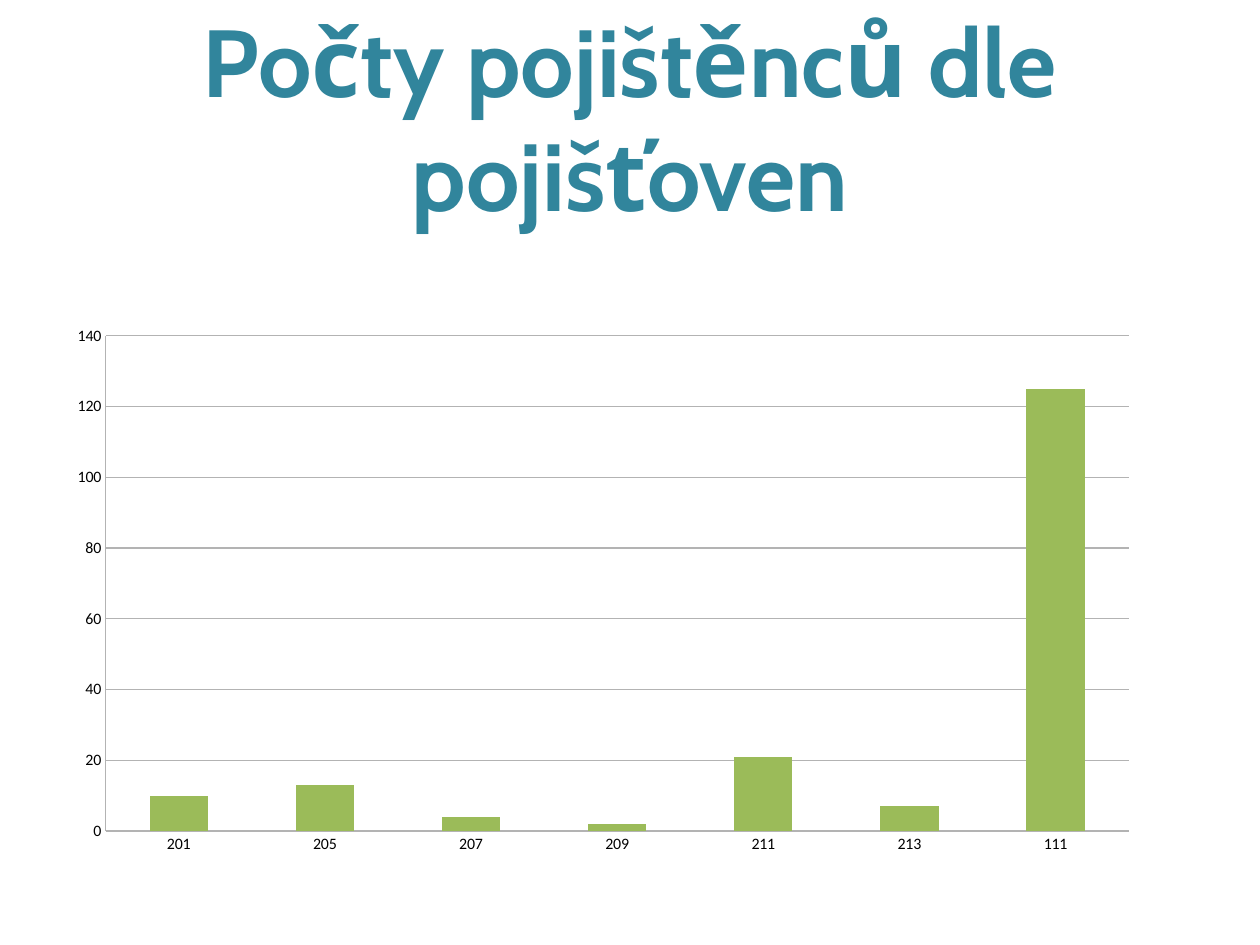
from pptx import Presentation
from pptx.chart.data import CategoryChartData as ChartData
from pptx.dml.color import RGBColor
from pptx.enum.chart import XL_CHART_TYPE as ChartType, XL_TICK_MARK as TickMark
from pptx.enum.text import MSO_ANCHOR as Anchor, MSO_AUTO_SIZE as AutoSize, PP_ALIGN as Align
from pptx.oxml import parse_xml
from pptx.oxml.ns import nsdecls, qn
from pptx.util import Cm, Inches, Pt

INSURERS = ["201", "205", "207", "209", "211", "213", "111"]
INSURED_COUNTS = [10, 13, 4, 2, 21, 7, 125]


def colour(value):
    """Turn a hex string into a colour."""
    return RGBColor.from_string(value)


class SlideBuilder:
    """Hold the style and the current slide."""

    title_font, chart_font = "Cabin", "Calibri"
    title_colour, bar_colour, line_colour, text_colour = "31859C", "9BBB59", "B3B3B3", "000000"

    def __init__(self, deck):
        """Add a title-only slide with a white background."""
        self.page = deck.slides.add_slide(deck.slide_layouts[5])
        self.page.background.fill.solid()
        self.page.background.fill.fore_color.rgb = colour("FFFFFF")

    def title(self, text, left, top, width, height):
        """Place and format the title placeholder."""
        box = self.page.shapes.title
        box.left, box.top, box.width, box.height = map(Inches, (left, top, width, height))
        frame = box.text_frame
        frame.text = text
        frame.word_wrap = True
        frame.auto_size = AutoSize.NONE
        frame.vertical_anchor = Anchor.MIDDLE
        frame.margin_left = frame.margin_right = frame.margin_top = frame.margin_bottom = 0
        para = frame.paragraphs[0]
        para.alignment = Align.CENTER
        self.font(para.font, self.title_font, 60, self.title_colour, True)

    def font(self, font, name, size, hex_colour, bold=False):
        """Set name, size, colour and weight of a font."""
        font.name, font.size, font.bold = name, Pt(size), bold
        font.color.rgb = colour(hex_colour)

    def line(self, line):
        """Draw a thin grey chart line."""
        line.color.rgb = colour(self.line_colour)
        line.width = Pt(0.75)

    def column_chart(self, categories, values, left, top, width, height):
        """Add a column chart with one series."""
        data = ChartData()
        data.categories = categories
        data.add_series("Series 1", values)
        chart = self.page.shapes.add_chart(
            ChartType.COLUMN_CLUSTERED, *map(Inches, (left, top, width, height)), data).chart
        chart.has_legend = chart.has_title = False
        self.font(chart.font, self.chart_font, 10, self.text_colour)
        plot = chart.plots[0]
        plot.gap_width = 150
        plot.vary_by_categories = False
        fill = plot.series[0].format.fill
        fill.solid()
        fill.fore_color.rgb = colour(self.bar_colour)
        for axis in (chart.category_axis, chart.value_axis):
            axis.major_tick_mark = axis.minor_tick_mark = TickMark.NONE
            self.line(axis.format.line)
        scale = chart.value_axis
        scale.minimum_scale, scale.maximum_scale, scale.major_unit = 0, 140, 20
        self.line(scale.major_gridlines.format.line)
        self.plot_layout(chart, x=0.014, y=0.027, w=0.927, h=0.96)

    def plot_layout(self, chart, **fractions):
        """Fix the outer plot area as fractions of the chart."""
        area = chart.plots[0]._element.getparent()
        for layout in area.findall(qn("c:layout")):
            area.remove(layout)
        sizes = "".join(f'<c:{key} val="{value}"/>' for key, value in fractions.items())
        area.insert(0, parse_xml(
            f'<c:layout {nsdecls("c")}><c:manualLayout><c:layoutTarget val="outer"/>'
            f'<c:xMode val="edge"/><c:yMode val="edge"/>{sizes}</c:manualLayout></c:layout>'))


def main():
    """Build and save the deck."""
    deck = Presentation()
    deck.slide_width = Cm(28)
    deck.slide_height = Cm(21)
    builder = SlideBuilder(deck)
    builder.title("Počty pojištěnců dle pojišťoven", 0.55, 0.33, 9.92, 1.38)
    builder.column_chart(INSURERS, INSURED_COUNTS, 0.54, 2.73, 9.92, 4.8)
    deck.save("out.pptx")


if __name__ == "__main__":
    main()
